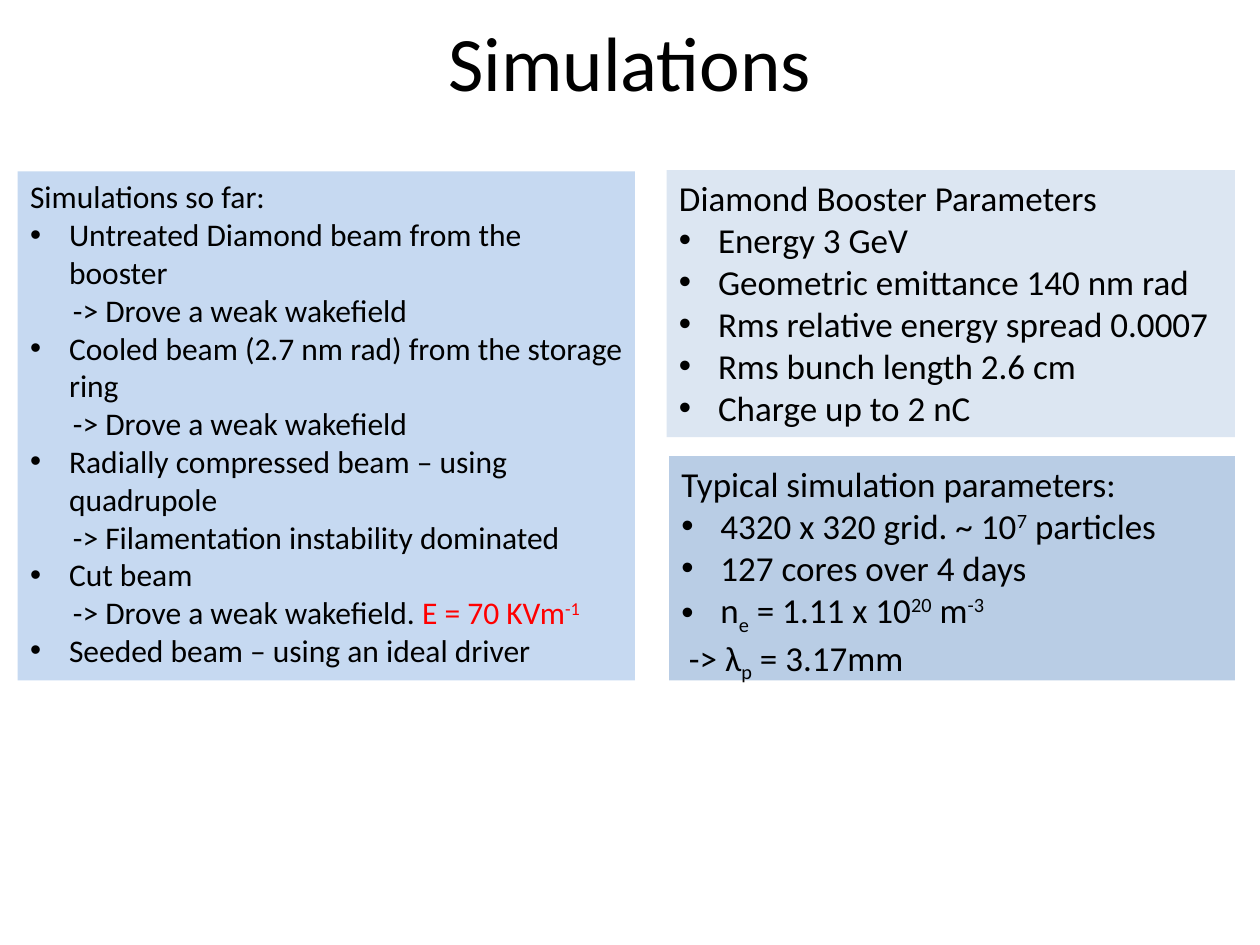
from dataclasses import dataclass

from lxml import etree
from pptx import Presentation
from pptx.dml.color import RGBColor
from pptx.enum.shapes import MSO_SHAPE
from pptx.enum.text import MSO_ANCHOR, PP_ALIGN
from pptx.oxml.ns import qn
from pptx.slide import Slide
from pptx.util import Inches, Pt

BLACK = RGBColor(0x00, 0x00, 0x00)
RED = RGBColor(0xFF, 0x00, 0x00)
SKY = RGBColor(0xC6, 0xD9, 0xF1)
PALE = RGBColor(0xDC, 0xE6, 0xF2)
STEEL = RGBColor(0xB9, 0xCD, 0xE5)

RECTANGLE = MSO_SHAPE.RECTANGLE
MIDDLE = MSO_ANCHOR.MIDDLE
TOP = MSO_ANCHOR.TOP
CENTER = PP_ALIGN.CENTER
LEFT = PP_ALIGN.LEFT

TITLE_ONLY = 5
SUPER = 30
SUB = -25
BULLET_INDENT = 0.31


def add_text(paragraph, text, font="Calibri", size=18, color=BLACK, baseline=0):
    run = paragraph.add_run()
    run.text = text
    run.font.name = font
    run.font.size = Pt(size)
    run.font.color.rgb = color
    if baseline:
        run._r.get_or_add_rPr().set("baseline", str(baseline * 1000))


def bullet(*pieces):
    return True, BULLET_INDENT, pieces


def result(*pieces, indent=0.34):
    return False, indent, pieces


@dataclass
class Deck:
    slide: Slide
    font: str = "Calibri"

    def title(self, text, left, top, width, height):
        heading = self.slide.shapes.title
        heading.left, heading.top = Inches(left), Inches(top)
        heading.width, heading.height = Inches(width), Inches(height)
        heading.text_frame.vertical_anchor = MIDDLE
        line = heading.text_frame.paragraphs[0]
        line.alignment = CENTER
        add_text(line, text, font=self.font, size=44)

    def panel(self, heading, lines, left, top, width, height, fill, size):
        panel = self.slide.shapes.add_shape(
            RECTANGLE, Inches(left), Inches(top), Inches(width), Inches(height))
        panel.shadow.inherit = False
        panel.fill.solid()
        panel.fill.fore_color.rgb = fill
        panel.line.fill.background()
        frame = panel.text_frame
        frame.word_wrap = True
        frame.vertical_anchor = TOP
        first = frame.paragraphs[0]
        first.alignment = LEFT
        add_text(first, heading, font=self.font, size=size)
        for bulleted, indent, pieces in lines:
            self.line(frame.add_paragraph(), bulleted, indent, pieces, size)

    def line(self, paragraph, bulleted, indent, pieces, size):
        paragraph.alignment = LEFT
        properties = paragraph._p.get_or_add_pPr()
        properties.set("marL", str(Inches(indent)))
        if bulleted:
            properties.set("indent", str(-Inches(indent)))
            etree.SubElement(properties, qn("a:buFont")).set("typeface", "Arial")
            etree.SubElement(properties, qn("a:buChar")).set("char", "•")
        for piece in pieces:
            text, style = (piece, {}) if isinstance(piece, str) else piece
            add_text(paragraph, text, font=self.font, size=size, **style)


def main():
    presentation = Presentation()
    presentation.slide_width = Inches(10)
    presentation.slide_height = Inches(7.5)
    deck = Deck(presentation.slides.add_slide(presentation.slide_layouts[TITLE_ONLY]))

    deck.title("Simulations", 0.75, -0.11, 8.5, 1.18)

    simulations = [
        bullet("Untreated Diamond beam from the booster"),
        result("-> Drove a weak wakefield"),
        bullet("Cooled beam (2.7 nm rad) from the storage ring"),
        result("-> Drove a weak wakefield"),
        bullet("Radially compressed beam – using quadrupole"),
        result("-> Filamentation instability dominated"),
        bullet("Cut beam"),
        result("-> Drove a weak wakefield. ",
               ("E = 70 KVm", {"color": RED}),
               ("-1", {"color": RED, "baseline": SUPER})),
        bullet("Seeded beam – using an ideal driver"),
    ]
    deck.panel("Simulations so far:", simulations, 0.14, 1.36, 4.9, 4.04, SKY, 18)

    booster = [
        bullet("Energy 3 GeV"),
        bullet("Geometric emittance 140 nm rad"),
        bullet("Rms relative energy spread 0.0007"),
        bullet("Rms bunch length 2.6 cm"),
        bullet("Charge up to 2 nC"),
    ]
    deck.panel("Diamond Booster Parameters", booster, 5.29, 1.35, 4.51, 2.12, PALE, 20)

    typical = [
        bullet("4320 x 320 grid. ~ 10", ("7", {"baseline": SUPER}), " particles"),
        bullet("127 cores over 4 days"),
        bullet("n", ("e", {"baseline": SUB}), " = 1.11 x 10",
               ("20", {"baseline": SUPER}), " m", ("-3", {"baseline": SUPER})),
        result("-> λ", ("p", {"baseline": SUB}), " = 3.17mm", indent=0.06),
    ]
    deck.panel("Typical simulation parameters:", typical, 5.31, 3.62, 4.49, 1.78, STEEL, 20)

    presentation.save("out.pptx")


if __name__ == "__main__":
    main()
